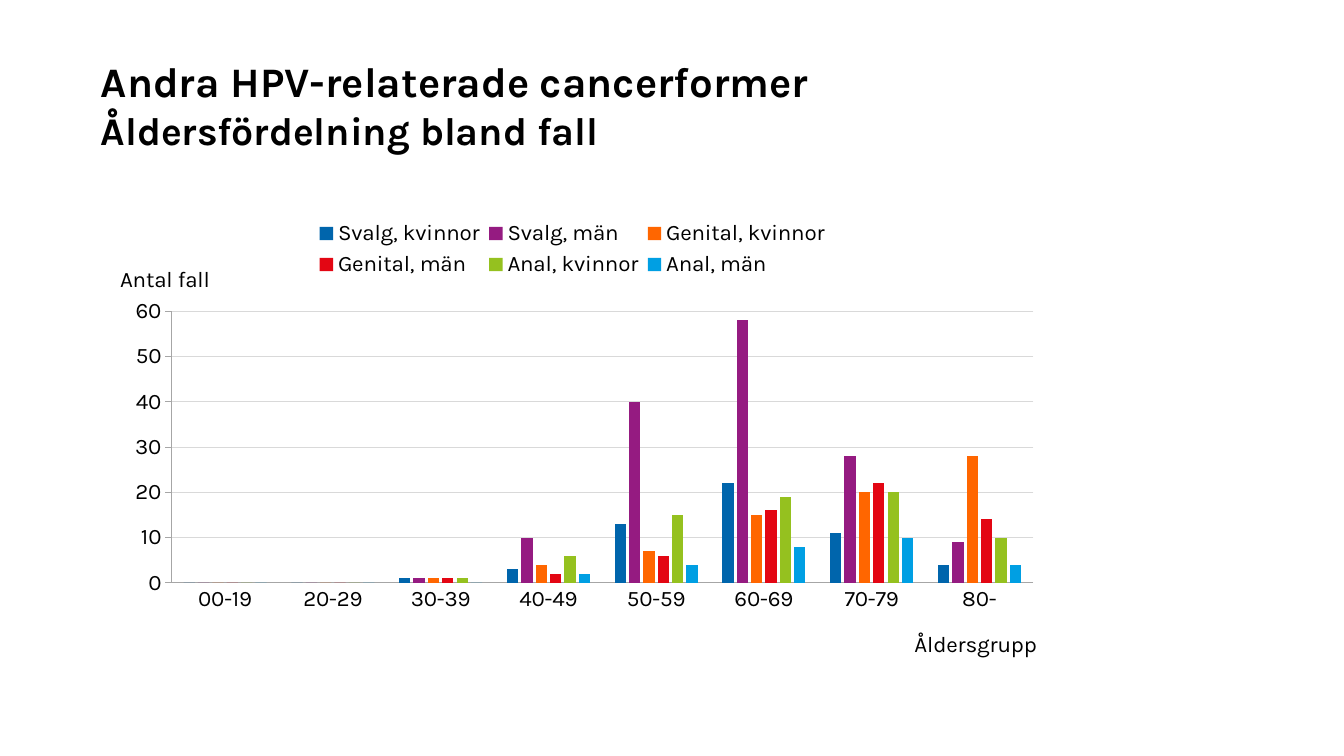
from dataclasses import dataclass

from lxml import etree
from pptx import Presentation
from pptx import util as u
from pptx.chart import data as chart_data
from pptx.dml import color
from pptx.enum import chart as chart_enum
from pptx.enum import text
from pptx.oxml import ns


@dataclass(frozen=True)
class Theme:
    """Fonts, type sizes and colours of the slide."""
    font: str = "Karla"
    title: int = 30
    subtitle: int = 28
    label: int = 16
    ink: str = "000000"
    axis: str = "A6A6A6"
    grid: str = "D9D9D9"


THEME = Theme()
AGE_GROUPS = ["00-19", "20-29", "30-39", "40-49", "50-59", "60-69", "70-79", "80-"]
CASES = [
    ("Svalg, kvinnor", "0065AC", [0, 0, 1, 3, 13, 22, 11, 4]),
    ("Svalg, män", "951B81", [0, 0, 1, 10, 40, 58, 28, 9]),
    ("Genital, kvinnor", "FF6600", [0, 0, 1, 4, 7, 15, 20, 28]),
    ("Genital, män", "E30613", [0, 0, 1, 2, 6, 16, 22, 14]),
    ("Anal, kvinnor", "95C11F", [0, 0, 1, 6, 15, 19, 20, 10]),
    ("Anal, män", "009FE3", [0, 0, 0, 2, 4, 8, 10, 4]),
]


def style_font(font, size, bold=False):
    """Apply the theme's typeface and ink to a font."""
    font.name = THEME.font
    font.size = u.Pt(size)
    font.bold = bold
    font.color.rgb = color.RGBColor.from_string(THEME.ink)


def style_line(line, rgb):
    """Give a line a thin stroke in one colour."""
    line.width = u.Pt(0.75)
    line.color.rgb = color.RGBColor.from_string(rgb)


def place_part(element, x, y, w=None, h=None, inner=False):
    """Set a chart part's position as fractions of the chart area."""
    for old in element.findall(ns.qn("c:layout")):
        element.remove(old)
    layout = etree.Element(ns.qn("c:layout"))
    manual = etree.SubElement(layout, ns.qn("c:manualLayout"))
    settings = [("layoutTarget", "inner" if inner else None), ("xMode", "edge"),
                ("yMode", "edge"), ("x", x), ("y", y), ("w", w), ("h", h)]
    for tag, value in settings:
        if value is not None:
            etree.SubElement(manual, ns.qn(f"c:{tag}")).set("val", str(value))
    overlay = element.find(ns.qn("c:overlay"))
    following = element[0] if overlay is None else overlay
    following.addprevious(layout)


def style_axis(axis, title, x, y):
    """Format an axis and place its horizontal title."""
    style_font(axis.tick_labels.font, THEME.label)
    style_line(axis.format.line, THEME.axis)
    axis.has_title = True
    frame = axis.axis_title.text_frame
    run = frame.paragraphs[0].add_run()
    run.text = title
    style_font(run.font, THEME.label)
    element = axis.axis_title._element
    body = element.find(".//" + ns.qn("a:bodyPr"))
    body.set("rot", "0")
    body.set("vert", "horz")
    place_part(element, x, y)


def add_title(slide, left, top, width, height):
    """Fill the title placeholder with its two lines."""
    title = slide.shapes.title
    title.left, title.top = u.Pt(left), u.Pt(top)
    title.width, title.height = u.Pt(width), u.Pt(height)
    frame = title.text_frame
    frame.margin_left = frame.margin_right = frame.margin_top = frame.margin_bottom = 0
    frame.word_wrap = True
    frame.auto_size = text.MSO_AUTO_SIZE.NONE
    frame.vertical_anchor = text.MSO_ANCHOR.BOTTOM
    paragraph = frame.paragraphs[0]
    paragraph.alignment = text.PP_ALIGN.LEFT
    paragraph.line_spacing = u.Pt(34)
    first = paragraph.add_run()
    first.text = "Andra HPV-relaterade cancerformer"
    style_font(first.font, THEME.title, bold=True)
    paragraph.add_line_break()
    second = paragraph.add_run()
    second.text = "Åldersfördelning bland fall"
    style_font(second.font, THEME.subtitle, bold=True)


def add_case_chart(slide, left, top, width, height):
    """Draw the clustered columns of cases by age group."""
    data = chart_data.CategoryChartData()
    data.categories = AGE_GROUPS
    for name, _, values in CASES:
        data.add_series(name, values)
    chart = slide.shapes.add_chart(
        chart_enum.XL_CHART_TYPE.COLUMN_CLUSTERED,
        u.Pt(left), u.Pt(top), u.Pt(width), u.Pt(height), data).chart
    chart.has_title = False
    style_font(chart.font, THEME.label)

    plot = chart.plots[0]
    plot.gap_width = 219
    plot.overlap = -27
    plot.vary_by_categories = False
    for series, (_, rgb, _) in zip(plot.series, CASES):
        series.format.fill.solid()
        series.format.fill.fore_color.rgb = color.RGBColor.from_string(rgb)
    plot_area = chart._chartSpace.find(".//" + ns.qn("c:plotArea"))
    place_part(plot_area, 0.074, 0.237, 0.905, 0.598, inner=True)

    ages, counts = chart.category_axis, chart.value_axis
    style_axis(ages, "Åldersgrupp", 0.85, 0.93)
    ages.major_tick_mark = chart_enum.XL_TICK_MARK.NONE
    style_axis(counts, "Antal fall", 0.016, 0.126)
    counts.major_tick_mark = chart_enum.XL_TICK_MARK.OUTSIDE
    counts.minimum_scale, counts.maximum_scale, counts.major_unit = 0, 60, 10
    counts.has_major_gridlines = True
    style_line(counts.major_gridlines.format.line, THEME.grid)

    chart.has_legend = True
    legend = chart.legend
    legend.position = chart_enum.XL_LEGEND_POSITION.BOTTOM
    legend.include_in_layout = False
    style_font(legend.font, THEME.label)
    place_part(legend._element, 0.22, 0.025, 0.55, 0.15)


def main():
    """Build and save the slide."""
    presentation = Presentation()
    presentation.slide_width, presentation.slide_height = u.Pt(960), u.Pt(540)
    slide = presentation.slides.add_slide(presentation.slide_layouts[5])
    add_title(slide, 72, 37.5, 720, 72)
    add_case_chart(slide, 72, 145.5, 680.4, 329)
    presentation.save("out.pptx")


if __name__ == "__main__":
    main()
